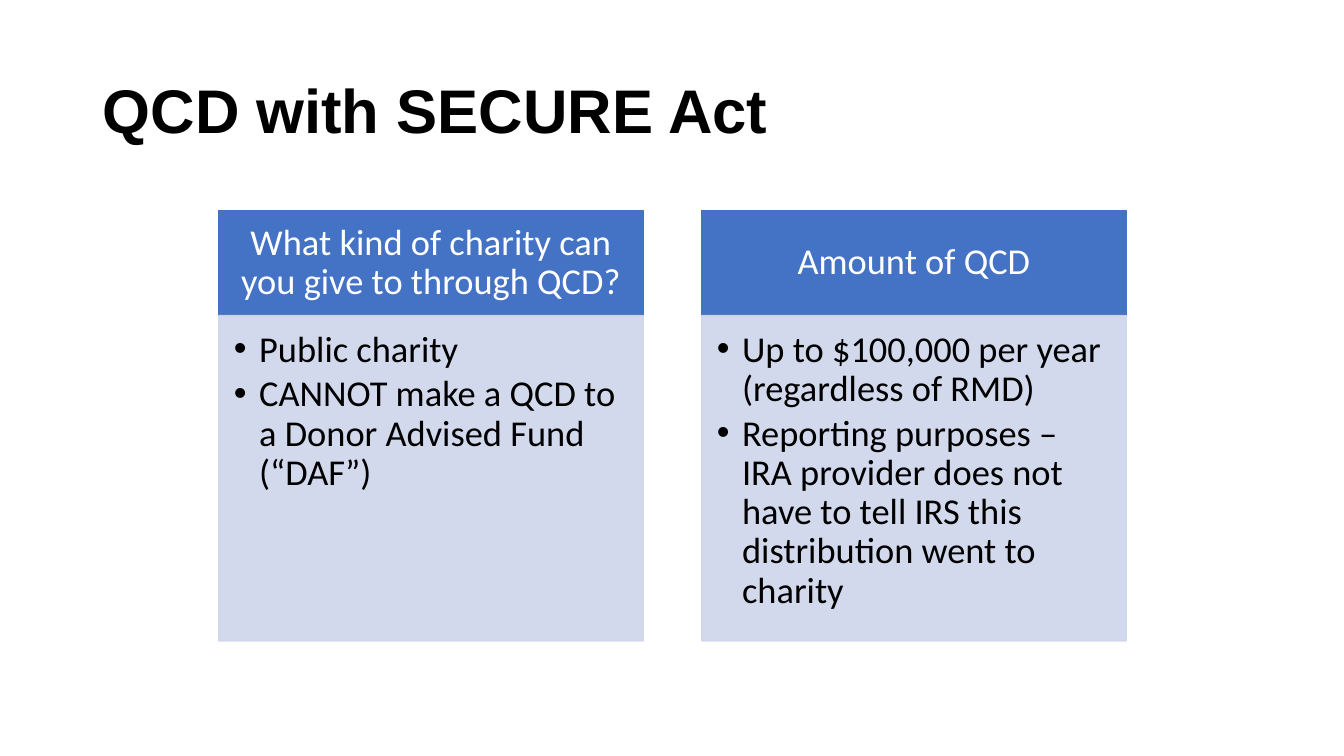
from lxml import etree
from pptx import Presentation
from pptx import util as u
from pptx.dml.color import RGBColor
from pptx.enum import shapes, text
from pptx.oxml.ns import qn

WIDE, HIGH = 13.33, 7.5
HUES = {"head": "4472C4", "body": "CFD5EA", "ink": "000000", "light": "FFFFFF"}
SIZE = 26

# Column grid, in inches
LEFT, TOP, COL, STEP = 2.17, 2.09, 4.21, 4.79
HEAD, BODY = 1.04, 3.23

CARDS = [
    ("What kind of charity can you give to through QCD?",
     ["Public charity",
      "CANNOT make a QCD to a Donor Advised Fund (“DAF”)"]),
    ("Amount of QCD",
     ["Up to $100,000 per year (regardless of RMD)",
      "Reporting purposes – IRA provider does not have to tell IRS "
      "this distribution went to charity"]),
]


def frame(shape, pads, anchor):
    """Set wrapping, margins and anchor of a shape's text."""
    tf = shape.text_frame
    tf.word_wrap = True
    tf.vertical_anchor = anchor
    (tf.margin_left, tf.margin_top,
     tf.margin_right, tf.margin_bottom) = map(u.Inches, pads)
    return tf


def write(para, words, hue, size=SIZE, font="Calibri", bold=False, after=0):
    para.line_spacing = 0.9
    para.space_after = u.Pt(after)
    run = para.add_run()
    run.text = words
    run.font.name, run.font.size, run.font.bold = font, u.Pt(size), bold
    run.font.color.rgb = RGBColor.from_string(HUES[hue])


def bullet(para):
    props = para._p.get_or_add_pPr()
    props.set("marL", str(u.Inches(0.25)))
    props.set("indent", str(u.Inches(-0.25)))
    etree.SubElement(props, qn("a:buFont"), typeface="Arial")
    etree.SubElement(props, qn("a:buChar"), char="•")


def panel(slide, box, hue, alpha=100):
    """Add a filled rectangle with a matching outline."""
    rect = slide.shapes.add_shape(shapes.MSO_SHAPE.RECTANGLE, *map(u.Inches, box))
    rect.shadow.inherit = False
    rect.fill.solid()
    rect.line.width = u.Pt(1)
    for fill in (rect.fill, rect.line.fill):
        fill.solid()
        fill.fore_color.rgb = RGBColor.from_string(HUES[hue])
    if alpha < 100:
        for tone in rect._element.spPr.iter(qn("a:srgbClr")):
            etree.SubElement(tone, qn("a:alpha"), val=str(alpha * 1000))
    return rect


def title(slide, box, words):
    area = slide.shapes.add_textbox(*map(u.Inches, box))
    tf = frame(area, (0.1, 0.05, 0.1, 0.05), text.MSO_ANCHOR.MIDDLE)
    write(tf.paragraphs[0], words, "ink", 44, "Arial", True)


def card(slide, box, head, items):
    x, y, w, h = box
    # Heading band
    band = panel(slide, (x, y, w, HEAD), "head")
    tf = frame(band, (0.2, 0.12, 0.2, 0.12), text.MSO_ANCHOR.MIDDLE)
    tf.paragraphs[0].alignment = text.PP_ALIGN.CENTER
    write(tf.paragraphs[0], head, "light")
    # Bullet list
    base = panel(slide, (x, y + HEAD, w, h - HEAD), "body", 90)
    tf = frame(base, (0.15, 0.15, 0.2, 0.23), text.MSO_ANCHOR.TOP)
    for i, item in enumerate(items):
        para = tf.add_paragraph() if i else tf.paragraphs[0]
        para.alignment = text.PP_ALIGN.LEFT
        write(para, item, "ink", after=0.15 * SIZE)
        bullet(para)


def main():
    deck = Presentation()
    deck.slide_width, deck.slide_height = u.Inches(WIDE), u.Inches(HIGH)
    slide = deck.slides.add_slide(deck.slide_layouts[6])
    title(slide, (0.92, 0.4, 11.5, 1.45), "QCD with SECURE Act")
    for i, (head, items) in enumerate(CARDS):
        card(slide, (LEFT + i * STEP, TOP, COL, HEAD + BODY), head, items)
    deck.save("out.pptx")


if __name__ == "__main__":
    main()
